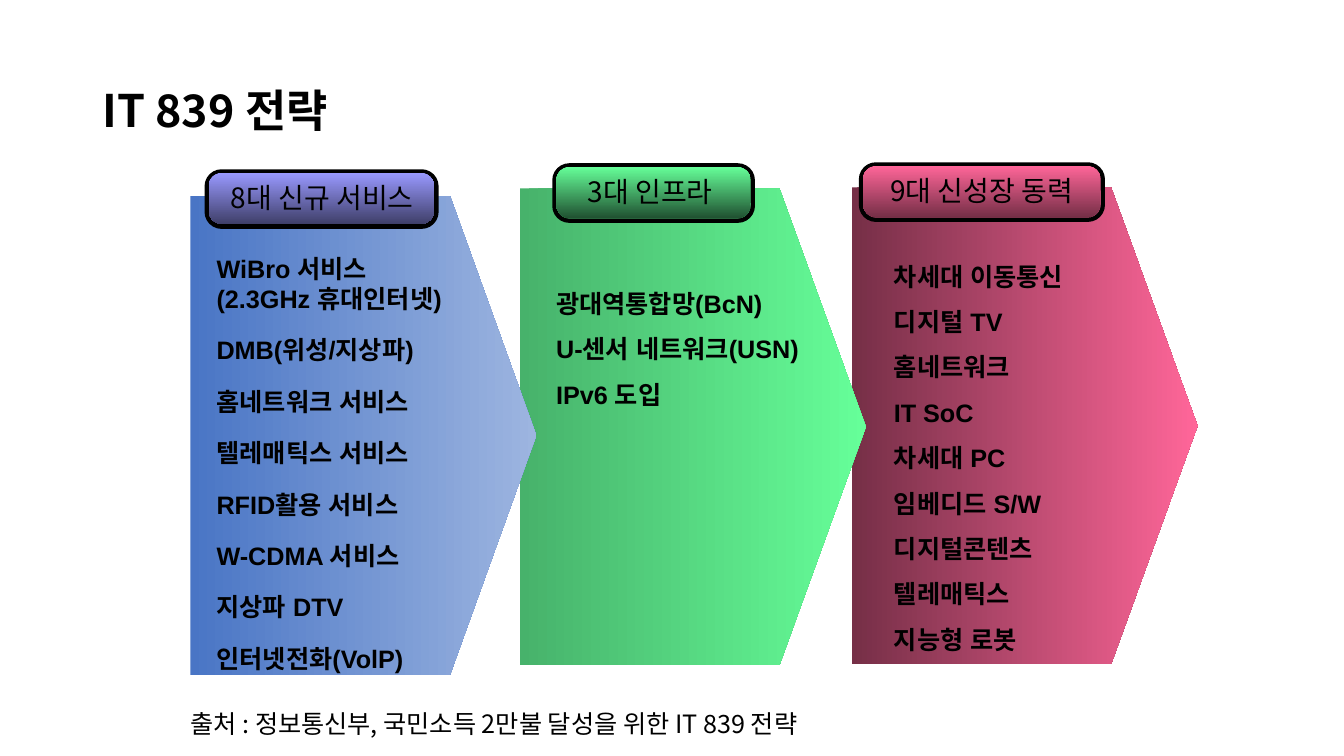
"""Build the IT 839 strategy slide with three arrow-shaped columns."""
from lxml.etree import SubElement
from pptx import Presentation
from pptx.dml.color import RGBColor
from pptx.enum.shapes import MSO_SHAPE
from pptx.enum.text import MSO_ANCHOR, PP_ALIGN
from pptx.oxml.ns import qn
from pptx.util import Pt

COLORS = {
    "black": "000000",
    "blue dark": "4975C5", "blue light": "9DB5E0",
    "violet": "9999FF", "violet deep": "3F3F69",
    "green": "66FF99", "green soft": "47B26B", "green mid": "3E9B5D", "green deep": "205131",
    "pink": "FF6699", "pink mid": "B6496D", "pink deep": "762F47",
}
NOTO = "Noto Sans CJK KR"


def add_block(kind, box, adjust, tones, angle):
    """Add a borderless shape filled with one color or a gradient of two."""
    block = slide.shapes.add_shape(kind, *map(Pt, box))
    block.adjustments[0] = adjust
    block.shadow.inherit = False
    block.line.fill.background()
    if len(tones) == 1:
        block.fill.solid()
        block.fill.fore_color.rgb = RGBColor.from_string(COLORS[tones[0]])
    else:
        block.fill.gradient()
        block.fill.gradient_angle = angle
        for stop, tone in zip(block.fill.gradient_stops, tones):
            stop.color.rgb = RGBColor.from_string(COLORS[tone])
    return block


def write(shape, lines, size, face, bold=False, align=PP_ALIGN.LEFT, anchor=MSO_ANCHOR.TOP):
    """Fill a shape with (text, line spacing) pairs in one font."""
    frame = shape.text_frame
    frame.vertical_anchor = anchor
    frame.text = "\n".join(text for text, _ in lines)
    for para, (_, gap) in zip(frame.paragraphs, lines):
        para.alignment = align
        para.line_spacing = gap
        para.font.size = Pt(size)
        para.font.name = face
        para.font.bold = bold
        para.font.color.rgb = RGBColor.from_string(COLORS["black"])
        SubElement(para._p.pPr.find(qn("a:defRPr")), qn("a:ea"), typeface=face)


deck = Presentation()
deck.slide_width, deck.slide_height = Pt(960), Pt(540)
slide = deck.slides.add_slide(deck.slide_layouts[5])

title = slide.shapes.title
title.left, title.top, title.width, title.height = map(Pt, (66, 28.8, 828, 104.4))
write(title, [("IT 839 전략", 0.9)], 32, NOTO, True, anchor=MSO_ANCHOR.MIDDLE)

columns = [
    {
        "plate": (608.4, 133.9, 247, 340.6), "shades": ("pink deep", "pink"),
        "badge": (615, 117.4, 172.8, 39.6), "rim": ("pink", "pink mid"),
        "face": ("pink", "pink deep"),
        "label": "9대 신성장 동력", "spot": (621.3, 119.5, 160, 35.3),
        "list": (631.4, 172.1, 172.1, 317.5),
        "items": [(text, 1.5) for text in (
            "차세대 이동통신", "디지털 TV", "홈네트워크", "IT SoC", "차세대 PC",
            "임베디드 S/W", "디지털콘텐츠", "텔레매틱스", "지능형 로봇")],
    },
    {
        "plate": (371.5, 134.6, 247, 340.6), "shades": ("green soft", "green"),
        "badge": (396, 118.1, 141.8, 39.6), "rim": ("green", "green mid"),
        "face": ("green", "green deep"),
        "label": "3대 인프라", "spot": (384.4, 120.2, 160, 35.3),
        "list": (390.2, 191.5, 197.3, 162.7),
        "items": [(text, 1.5) for text in (
            "광대역통합망(BcN)", "U-센서 네트워크(USN)", "IPv6 도입")],
    },
    {
        "plate": (136.1, 139.7, 247, 342.7), "shades": ("blue dark", "blue light"),
        "badge": (147.6, 122.4, 164.2, 39.6), "rim": ("black",),
        "face": ("violet", "violet deep"),
        "label": "8대 신규 서비스", "spot": (150.3, 124.6, 160, 35.3),
        "list": (147.6, 177.2, 187.9, 291.5),
        "items": [("WiBro 서비스", 1.0), ("(2.3GHz 휴대인터넷)", 1.0)] + [
            (text, 1.7) for text in (
                "DMB(위성/지상파)", "홈네트워크 서비스", "텔레매틱스 서비스",
                "RFID활용 서비스", "W-CDMA 서비스", "지상파 DTV", "인터넷전화(VolP)")],
    },
]

for col in columns:
    add_block(MSO_SHAPE.PENTAGON, col["plate"], 0.25, col["shades"], 0)
    items = slide.shapes.add_textbox(*map(Pt, col["list"]))
    items.text_frame.word_wrap = False
    write(items, col["items"], 18, "Arial", True)

    left, top, width, height = col["badge"]
    rim = add_block(MSO_SHAPE.ROUNDED_RECTANGLE, col["badge"], 0.27, col["rim"], 270)
    rim.line.color.rgb = RGBColor.from_string(COLORS["black"])
    rim.line.width = Pt(3)
    inner = (left + 1.4, top + 1, width - 3, height - 2.9)
    add_block(MSO_SHAPE.ROUNDED_RECTANGLE, inner, 0.27, col["face"], 270)
    label = slide.shapes.add_textbox(*map(Pt, col["spot"]))
    label.text_frame.word_wrap = False
    label.text_frame.margin_left = label.text_frame.margin_right = Pt(0)
    write(label, [(col["label"], 0.9)], 20, NOTO, align=PP_ALIGN.CENTER, anchor=MSO_ANCHOR.MIDDLE)

source = slide.shapes.add_textbox(Pt(128.9), Pt(502.6), Pt(494.6), Pt(28.8))
source.text_frame.word_wrap = False
write(source, [("출처 : 정보통신부, 국민소득 2만불 달성을 위한 IT 839 전략", 1.0)], 18, NOTO)

deck.save("out.pptx")
